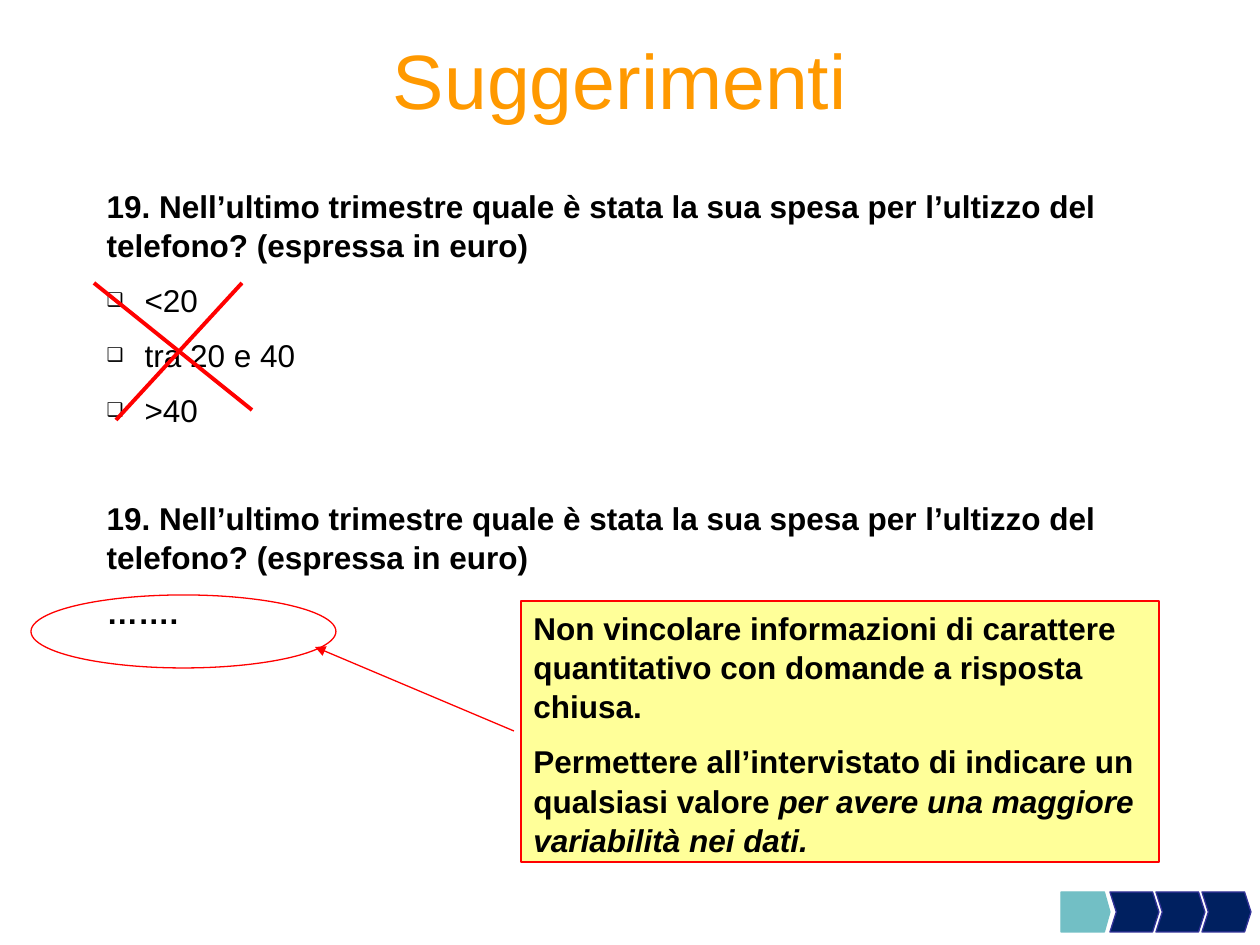
from dataclasses import dataclass

from lxml import etree
from pptx import Presentation
from pptx.dml.color import RGBColor
from pptx.enum.shapes import MSO_CONNECTOR, MSO_SHAPE
from pptx.enum.text import MSO_ANCHOR, MSO_AUTO_SIZE, PP_ALIGN
from pptx.oxml.ns import qn
from pptx.util import Emu, Pt

STRAIGHT = MSO_CONNECTOR.STRAIGHT
ELLIPSE, RECT = MSO_SHAPE.OVAL, MSO_SHAPE.RECTANGLE
PENTAGON, CHEVRON = MSO_SHAPE.PENTAGON, MSO_SHAPE.CHEVRON
TOP, MIDDLE = MSO_ANCHOR.TOP, MSO_ANCHOR.MIDDLE
LEFT, CENTER = PP_ALIGN.LEFT, PP_ALIGN.CENTER
NO_FIT = MSO_AUTO_SIZE.NONE
PX = 914400 / 126


@dataclass(frozen=True)
class Theme:
    font: str = "Arial"
    title_size: int = 44
    text_size: int = 18
    line_spacing: float = 1.04
    gap: int = 9
    section_gap: int = 39
    bullet_indent: int = 38
    title: str = "FF9900"
    text: str = "000000"
    accent: str = "FF0000"
    note: str = "FFFF99"
    step: str = "002060"
    step_line: str = "333399"
    current_step: str = "72BFC5"


@dataclass(frozen=True)
class Run:
    text: str
    bold: bool = True
    italic: bool = False


@dataclass(frozen=True)
class Para:
    runs: tuple[Run, ...]
    before: int
    bullet: bool = False


@dataclass(frozen=True)
class Box:
    x: int
    y: int
    w: int
    h: int


@dataclass(frozen=True)
class Line:
    x1: int
    y1: int
    x2: int
    y2: int
    width: float
    arrow: bool = False


THEME = Theme()
QUESTION = Run("19. Nell’ultimo trimestre quale è stata la sua spesa per "
               "l’ultizzo del telefono? (espressa in euro)")
BODY = [
    Para((QUESTION,), 0),
    *(Para((Run(answer, bold=False),), THEME.gap, bullet=True)
      for answer in ("<20", "tra 20 e 40", ">40")),
    Para((QUESTION,), THEME.section_gap),
    Para((Run("……."),), THEME.gap),
]
NOTE = [
    Para((Run("Non vincolare informazioni di carattere quantitativo con "
              "domande a risposta chiusa."),), 0),
    Para((Run("Permettere all’intervistato di indicare un qualsiasi valore "),
          Run("per avere una maggiore variabilità nei dati.", italic=True)),
         THEME.gap),
]
ARROW = Line(514, 731, 315, 647, 0.75, arrow=True)
CROSS = [Line(242, 283, 116, 420, 2.25), Line(94, 283, 252, 410, 2.25)]
STEP_W, STEP_H, STEP_Y = 49, 40, 892
FIRST_STEP_X, CHEVRON_X, CHEVRON_PITCH, CHEVRONS = 1061, 1110, 46, 3


def px(n: int) -> Emu:
    return Emu(round(n * PX))


def rgb(color: str) -> RGBColor:
    return RGBColor.from_string(color)


def set_attrs(obj, values: dict) -> None:
    for name, value in values.items():
        setattr(obj, name, value)


def place(sp, box: Box) -> None:
    set_attrs(sp, {"left": px(box.x), "top": px(box.y),
                   "width": px(box.w), "height": px(box.h)})


def set_bullet(p, bullet: bool) -> None:
    pPr = p._p.get_or_add_pPr()
    indent = px(THEME.bullet_indent) if bullet else 0
    pPr.set("marL", str(indent))
    pPr.set("indent", str(-indent))
    if bullet:
        etree.SubElement(pPr, qn("a:buSzPct"), val="60000")
        etree.SubElement(pPr, qn("a:buFont"), typeface=THEME.font)
        etree.SubElement(pPr, qn("a:buChar"), char="❑")
    else:
        etree.SubElement(pPr, qn("a:buNone"))


def add_run(p, run: Run, size: int, color: str) -> None:
    r = p.add_run()
    r.text = run.text
    set_attrs(r.font, {"name": THEME.font, "size": Pt(size),
                       "bold": run.bold, "italic": run.italic})
    r.font.color.rgb = rgb(color)


def write(tf, paras: list[Para]) -> None:
    set_attrs(tf, {"word_wrap": True, "auto_size": NO_FIT,
                   "vertical_anchor": TOP})
    for i, para in enumerate(paras):
        p = tf.add_paragraph() if i else tf.paragraphs[0]
        set_bullet(p, para.bullet)
        set_attrs(p, {"alignment": LEFT, "space_before": Pt(para.before),
                      "line_spacing": THEME.line_spacing})
        for run in para.runs:
            add_run(p, run, THEME.text_size, THEME.text)


def add_shape(slide, kind, box: Box, fill: str | None, line: str):
    sp = slide.shapes.add_shape(kind, px(box.x), px(box.y),
                                px(box.w), px(box.h))
    sp.shadow.inherit = False
    if fill:
        sp.fill.solid()
        sp.fill.fore_color.rgb = rgb(fill)
    else:
        sp.fill.background()
    sp.line.color.rgb = rgb(line)
    sp.line.width = Pt(0.75)
    return sp


def add_line(slide, line: Line) -> None:
    cxn = slide.shapes.add_connector(STRAIGHT, px(line.x1), px(line.y1),
                                     px(line.x2), px(line.y2))
    cxn.line.color.rgb = rgb(THEME.accent)
    cxn.line.width = Pt(line.width)
    if line.arrow:
        etree.SubElement(cxn.line._get_or_add_ln(), qn("a:tailEnd"),
                         type="triangle")
    etree.SubElement(cxn._element.spPr, qn("a:effectLst"))


def add_progress(slide) -> None:
    sp = add_shape(slide, PENTAGON, Box(FIRST_STEP_X, STEP_Y, STEP_W, STEP_H),
                   THEME.current_step, THEME.current_step)
    sp.adjustments[0] = 0.14
    for i in range(CHEVRONS):
        box = Box(CHEVRON_X + i * CHEVRON_PITCH, STEP_Y, STEP_W, STEP_H)
        sp = add_shape(slide, CHEVRON, box, THEME.step, THEME.step_line)
        sp.adjustments[0] = 0.16


def main() -> None:
    prs = Presentation()
    set_attrs(prs, {"slide_width": px(1260), "slide_height": px(945)})
    slide = prs.slides.add_slide(prs.slide_layouts[1])
    title, body = slide.placeholders

    place(title, Box(53, 0, 1134, 158))
    set_attrs(title.text_frame, {"vertical_anchor": MIDDLE,
                                 "auto_size": NO_FIT})
    p = title.text_frame.paragraphs[0]
    p.alignment = CENTER
    add_run(p, Run("Suggerimenti", bold=False), THEME.title_size, THEME.title)

    place(body, Box(94, 179, 1050, 528))
    write(body.text_frame, BODY)

    add_shape(slide, ELLIPSE, Box(31, 595, 305, 73), None, THEME.accent)
    add_line(slide, ARROW)
    note = add_shape(slide, RECT, Box(521, 601, 638, 261),
                     THEME.note, THEME.accent)
    write(note.text_frame, NOTE)
    for line in CROSS:
        add_line(slide, line)
    add_progress(slide)
    prs.save("out.pptx")


if __name__ == "__main__":
    main()
